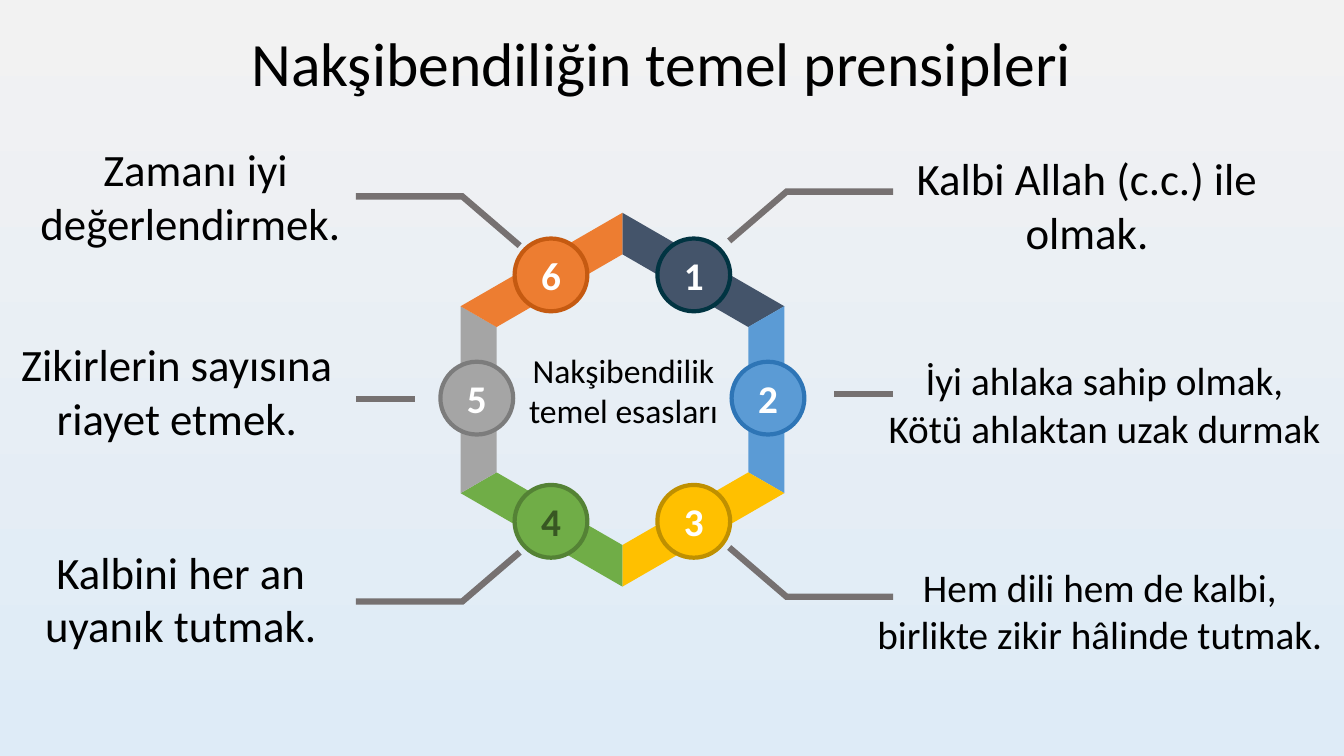
import math
from lxml import etree
from pptx import Presentation
from pptx.dml.color import RGBColor
from pptx.enum import shapes, text
from pptx.oxml import ns
from pptx.util import Pt

BLACK = RGBColor(0, 0, 0)
WHITE = RGBColor(255, 255, 255)
LEADER = RGBColor(0x76, 0x71, 0x71)
BACK_TOP = RGBColor(0xF2, 0xF2, 0xF2)
BACK_BOTTOM = RGBColor(0xDE, 0xEB, 0xF7)
NAVY, NAVY_EDGE = RGBColor(0x44, 0x54, 0x6A), RGBColor(0x01, 0x34, 0x42)
BLUE, BLUE_EDGE = RGBColor(0x5B, 0x9B, 0xD5), RGBColor(0x2E, 0x75, 0xB6)
GOLD, GOLD_EDGE = RGBColor(0xFF, 0xC0, 0x00), RGBColor(0xBF, 0x90, 0x00)
GREEN, GREEN_EDGE = RGBColor(0x70, 0xAD, 0x47), RGBColor(0x54, 0x82, 0x35)
GREY, GREY_EDGE = RGBColor(0xA5, 0xA5, 0xA5), RGBColor(0x7C, 0x7C, 0x7C)
ORANGE, ORANGE_EDGE = RGBColor(0xED, 0x7D, 0x31), RGBColor(0xC5, 0x5A, 0x11)
DARK_GREEN = RGBColor(0x38, 0x57, 0x23)
FONT = "Calibri"

TITLE = "Nakşibendiliğin temel prensipleri "
PRINCIPLES = [
    (["Kalbi Allah (c.c.) ile olmak."], 32, (620.6, 104.4, 311.8, 85)),
    (["İyi ahlaka sahip olmak,", "Kötü ahlaktan uzak durmak"], 28, (617.8, 251.3, 342, 75)),
    (["Hem dili hem de kalbi, birlikte zikir hâlinde tutmak."], 28, (611.3, 398.9, 348.5, 75)),
    (["Kalbini her an uyanık tutmak."], 32, (19.4, 385.2, 219.6, 85)),
    (["Zikirlerin sayısına riayet etmek."], 32, (5.8, 236.9, 241.2, 85)),
    (["Zamanı iyi değerlendirmek. "], 32, (5.8, 97.9, 267.8, 85)),
]
CENTRE_LABEL = (["Nakşibendilik", "temel esasları"], 24, (370.1, 246.2, 150.5, 65.5))
SEGMENTS = [
    (NAVY, NAVY_EDGE, WHITE, (51, -88)),
    (BLUE, BLUE_EDGE, WHITE, (104, 0)),
    (GOLD, GOLD_EDGE, WHITE, (51, 88)),
    (GREEN, GREEN_EDGE, DARK_GREEN, (-51, 88)),
    (GREY, GREY_EDGE, WHITE, (-104, 0)),
    (ORANGE, ORANGE_EDGE, WHITE, (-51, -88)),
]
CENTRE_X, CENTRE_Y, DISC_Y = 444.6, 285.5, 284.4
OUTER, INNER, DISC = 133.5, 103.8, 52
LEADER_SIDES = [(254.2, 285, 1), (637.9, 281.6, -1)]
KNEE, TIP, STUB = 76, 117, 42
LEADER_RISE, TIP_RISE = 144.7, 109.5


def pts(*values):
    return [Pt(v) for v in values]


def vertex(radius, i):
    angle = math.radians(60 * i - 90)
    return pts(CENTRE_X + radius * math.cos(angle), CENTRE_Y + radius * math.sin(angle))


def freeform(points, close):
    builder = s.shapes.build_freeform(*points[0], scale=1.0)
    builder.add_line_segments(points[1:], close=close)
    sp = builder.convert_to_shape()
    sp.shadow.inherit = False
    return sp


def leader_style(sp):
    sp.line.color.rgb = LEADER
    sp.line.width = Pt(4.5)
    etree.SubElement(sp.line._get_or_add_ln(), ns.qn("a:miter"), lim="800000")


def write(tf, lines, size, color, bold=False):
    for i, line in enumerate(lines):
        p = tf.add_paragraph() if i else tf.paragraphs[0]
        p.text = line
        p.alignment = text.PP_ALIGN.CENTER
        p.font.name, p.font.size, p.font.bold = FONT, Pt(size), bold
        p.font.color.rgb = color


def label(lines, size, box, wrap):
    tf = s.shapes.add_textbox(*pts(*box)).text_frame
    tf.word_wrap = wrap
    tf.auto_size = text.MSO_AUTO_SIZE.SHAPE_TO_FIT_TEXT
    write(tf, lines, size, BLACK)


prs = Presentation()
prs.slide_width, prs.slide_height = pts(960, 540)
s = prs.slides.add_slide(prs.slide_layouts[5])

back = s.background.fill
back.gradient()
back.gradient_angle = 270
for stop, color in zip(back.gradient_stops, (BACK_TOP, BACK_BOTTOM)):
    stop.color.rgb = color

title = s.shapes.title
title.left, title.top, title.width, title.height = pts(162, 18.7, 631.4, 58.3)
title.text_frame.vertical_anchor = text.MSO_ANCHOR.MIDDLE
write(title.text_frame, [TITLE], 44, BLACK)
title.text_frame.paragraphs[0].line_spacing = 0.9

for i, (fill, edge, ink, offset) in enumerate(SEGMENTS):
    corners = [vertex(OUTER, i), vertex(OUTER, i + 1), vertex(INNER, i + 1), vertex(INNER, i)]
    sp = freeform(corners, True)
    sp.fill.solid()
    sp.fill.fore_color.rgb = fill
    sp.line.fill.background()

for i, (fill, edge, ink, (dx, dy)) in enumerate(SEGMENTS):
    left, top = CENTRE_X + dx - DISC / 2, DISC_Y + dy - DISC / 2
    sp = s.shapes.add_shape(shapes.MSO_SHAPE.OVAL, *pts(left, top, DISC, DISC))
    sp.shadow.inherit = False
    sp.fill.solid()
    sp.fill.fore_color.rgb = fill
    sp.line.color.rgb = edge
    sp.line.width = Pt(3)
    tf = sp.text_frame
    tf.margin_left = tf.margin_right = tf.margin_top = tf.margin_bottom = Pt(3)
    tf.vertical_anchor = text.MSO_ANCHOR.MIDDLE
    write(tf, [str(i + 1)], 28, ink, True)

for x, y, side in LEADER_SIDES:
    for way in (-1, 1):
        end_y = y + way * LEADER_RISE
        bend = [pts(x, end_y), pts(x + side * KNEE, end_y),
                pts(x + side * TIP, y + way * TIP_RISE)]
        sp = freeform(bend, False)
        sp.fill.background()
        leader_style(sp)
    stub = s.shapes.add_connector(shapes.MSO_CONNECTOR.STRAIGHT, *pts(x, y, x + side * STUB, y))
    leader_style(stub)
    etree.SubElement(stub._element.spPr, ns.qn("a:effectLst"))

for lines, size, box in PRINCIPLES:
    label(lines, size, box, True)
label(*CENTRE_LABEL, False)

prs.save("out.pptx")
